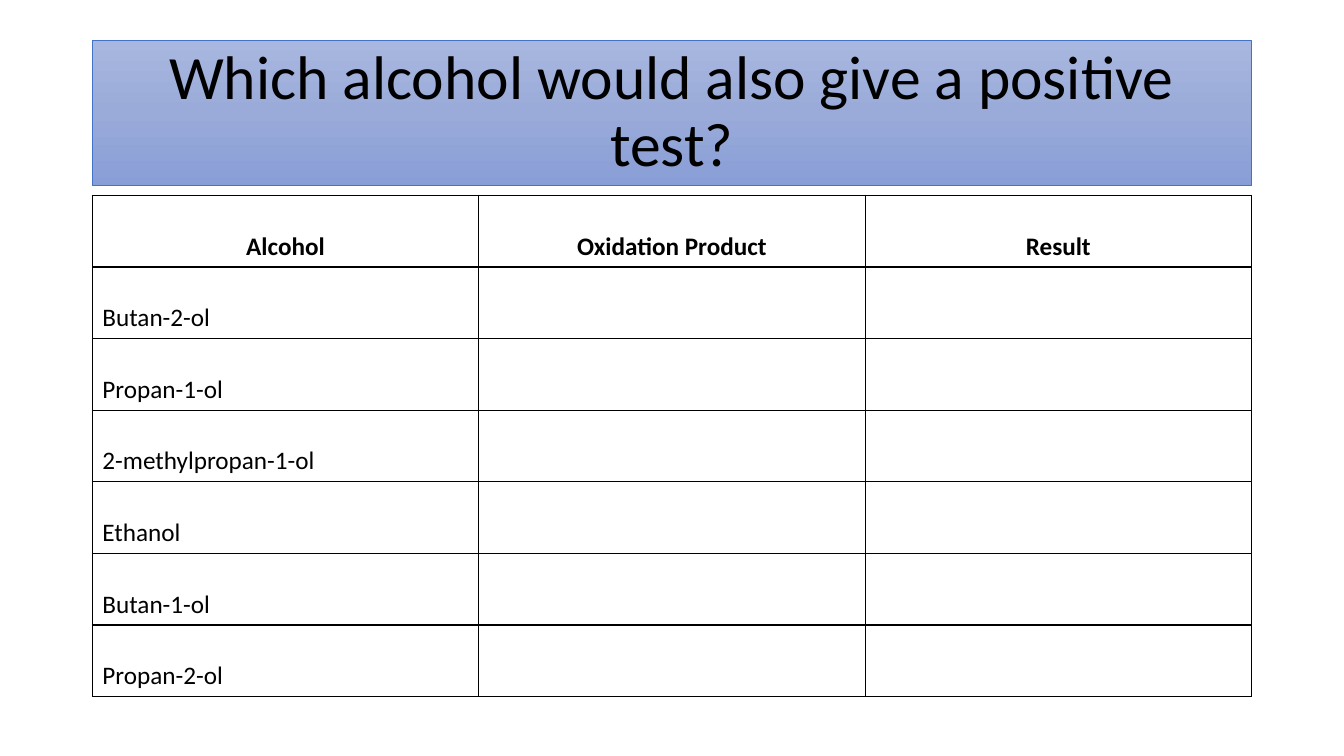
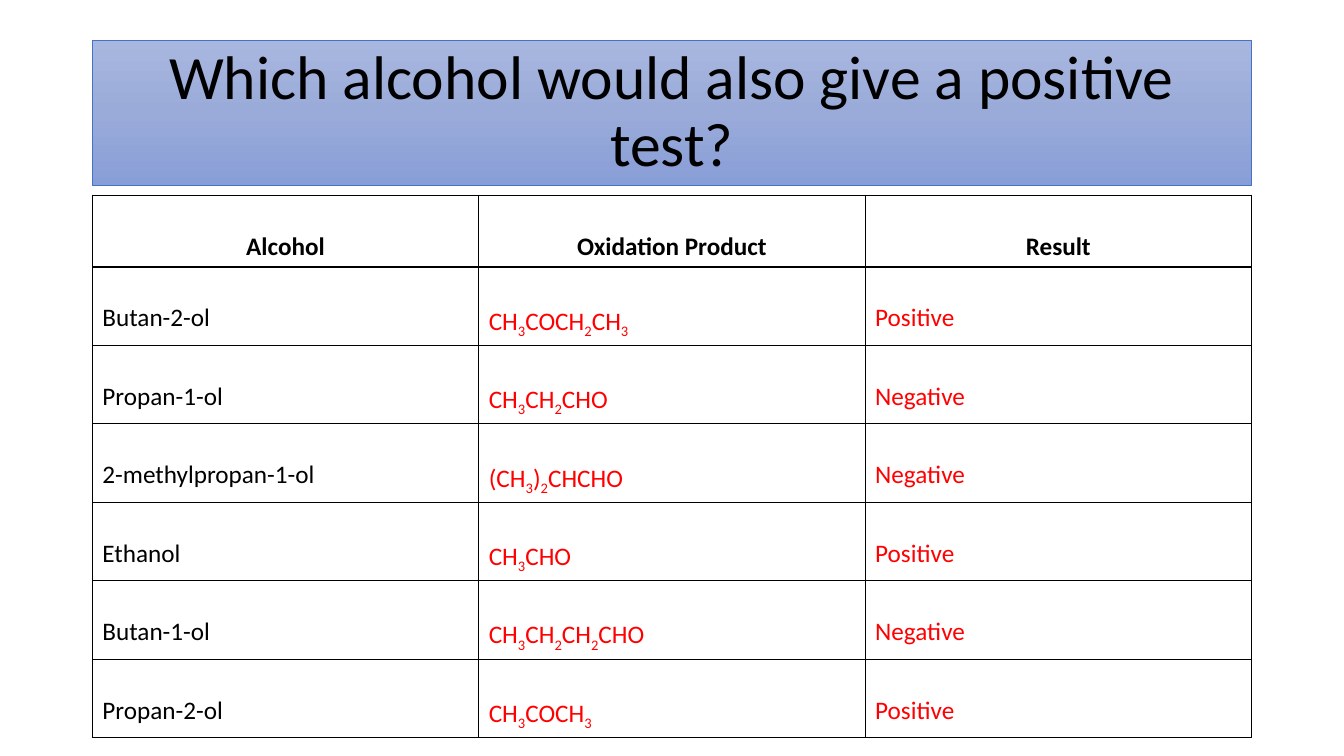
import copy
import itertools

import lxml.etree
import pptx
import pptx.dml.color
import pptx.enum.text
import pptx.oxml.ns
import pptx.util

PX = 9525
FONT = "Calibri"
HUES = {
    "ink": "000000",
    "answer": "FF0000",
    "edge": "4472C4",
    "top": "A8B7DF",
    "mid": "9AABD9",
    "base": "889ED7",
}
ALIGN = pptx.enum.text.PP_ALIGN
TITLE = "Which alcohol would also give a positive test?"
HEADS = ("Alcohol", "Oxidation Product", "Result")
ROWS = (
    ("Butan-2-ol", "CH3COCH2CH3", "Positive"),
    ("Propan-1-ol", "CH3CH2CHO", "Negative"),
    ("2-methylpropan-1-ol", "(CH3)2CHCHO", "Negative"),
    ("Ethanol", "CH3CHO", "Positive"),
    ("Butan-1-ol", "CH3CH2CH2CHO", "Negative"),
    ("Propan-2-ol", "CH3COCH3", "Positive"),
)


def color(name):
    """Return the named colour."""
    return pptx.dml.color.RGBColor.from_string(HUES[name])


def write(frame, text, size=18, hue="ink", bold=False, align=ALIGN.LEFT, lead=2.0, sub=False):
    """Write one paragraph, with its digits lowered when sub is set."""
    para = frame.paragraphs[0]
    para.alignment = align
    para.line_spacing = lead
    parts = itertools.groupby(text, lambda sign: sub and sign.isdigit())
    for low, signs in parts:
        run = para.add_run()
        run.text = "".join(signs)
        font = run.font
        font.name, font.size, font.bold = FONT, pptx.util.Pt(size), bold
        font.color.rgb = color(hue)
        if low:
            font._element.set("baseline", "-25000")


class Deck:
    """Hold the style and the current slide."""

    def __init__(self):
        """Start an empty wide deck."""
        self.file = pptx.Presentation()
        self.file.slide_width = 1280 * PX
        self.file.slide_height = 720 * PX
        self.slide = None

    def page(self):
        """Add a slide with a title placeholder."""
        self.slide = self.file.slides.add_slide(self.file.slide_layouts[5])

    def title(self, text):
        """Fill the title band."""
        band = self.slide.shapes.title
        band.left, band.top, band.width, band.height = (n * PX for n in (88, 38, 1104, 139))
        fill = band.fill
        fill.gradient()
        fill.gradient_angle = 270
        stops = band.element.spPr.find(".//" + pptx.oxml.ns.qn("a:gsLst"))
        stops.insert(1, copy.deepcopy(stops[0]))
        for stop, name, spot in zip(fill.gradient_stops, ("top", "mid", "base"), (0, 0.5, 1)):
            stop.color.rgb = color(name)
            stop.position = spot
        band.line.color.rgb = color("edge")
        band.line.width = pptx.util.Pt(0.5)
        band.shadow.inherit = False
        frame = band.text_frame
        frame.word_wrap = True
        frame.auto_size = pptx.enum.text.MSO_AUTO_SIZE.NONE
        frame.vertical_anchor = pptx.enum.text.MSO_ANCHOR.MIDDLE
        write(frame, text, size=44, align=ALIGN.CENTER, lead=0.9)

    def frame(self, cell):
        """Give a cell thin borders and no fill."""
        props = cell._tc.get_or_add_tcPr()
        for side in ("a:lnL", "a:lnR", "a:lnT", "a:lnB"):
            line = lxml.etree.SubElement(props, pptx.oxml.ns.qn(side), w=str(pptx.util.Pt(1)))
            solid = lxml.etree.SubElement(line, pptx.oxml.ns.qn("a:solidFill"))
            lxml.etree.SubElement(solid, pptx.oxml.ns.qn("a:srgbClr"), val=HUES["ink"])
        cell.fill.background()

    def table(self, heads, rows, solved):
        """Add the table, with its answers when solved."""
        count = len(rows) + 1
        box = (n * PX for n in (88, 186, 1104, 68 * count))
        grid = self.slide.shapes.add_table(count, len(heads), *box).table
        grid.first_row = grid.horz_banding = False
        for cell in grid.iter_cells():
            self.frame(cell)
        for col, head in enumerate(heads):
            write(grid.cell(0, col).text_frame, head, bold=True, align=ALIGN.CENTER)
        for row, (name, product, result) in enumerate(rows, 1):
            write(grid.cell(row, 0).text_frame, name)
            if solved:
                write(grid.cell(row, 1).text_frame, product, hue="answer", sub=True)
                write(grid.cell(row, 2).text_frame, result, hue="answer")


def main():
    """Build the question slide and the answer slide."""
    deck = Deck()
    for solved in (False, True):
        deck.page()
        deck.title(TITLE)
        deck.table(HEADS, ROWS, solved)
    deck.file.save("out.pptx")


if __name__ == "__main__":
    main()
